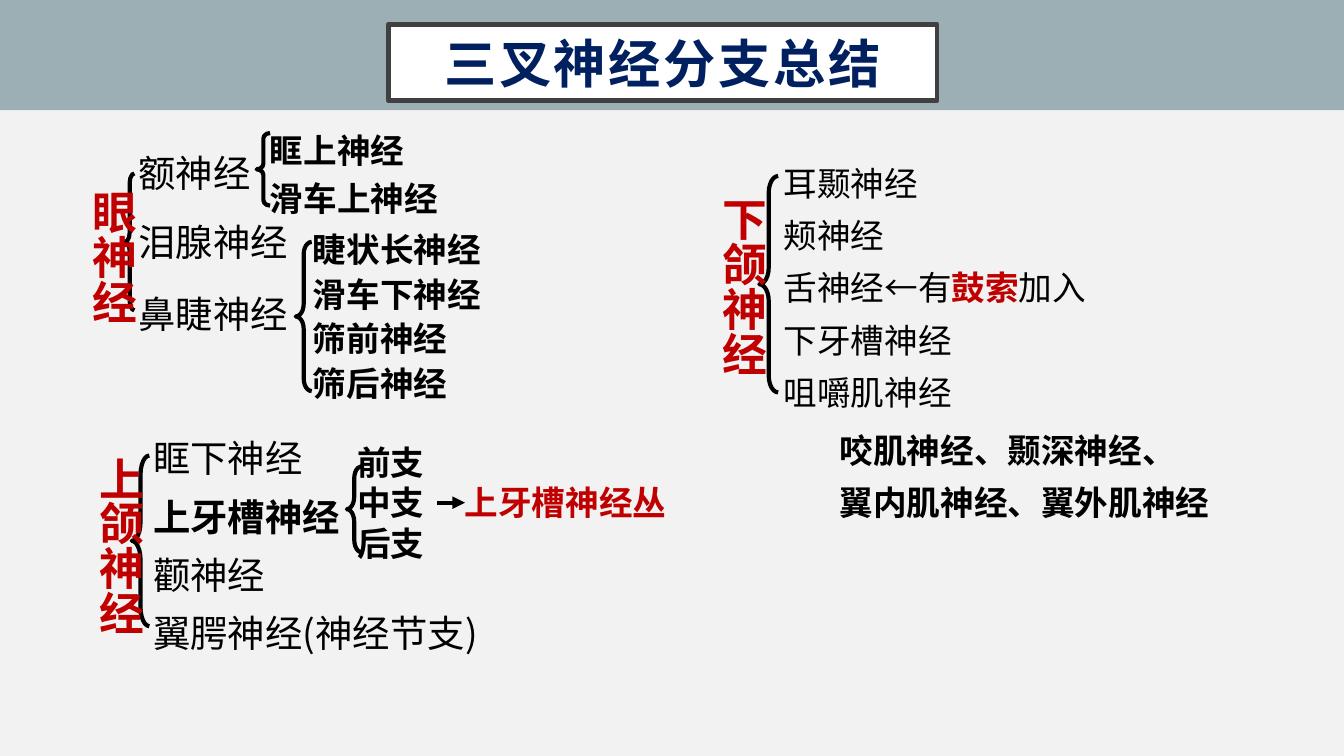
from itertools import cycle

from lxml import etree
from pptx import Presentation
from pptx.dml.color import RGBColor
from pptx.enum.shapes import MSO_CONNECTOR, MSO_SHAPE
from pptx.enum.text import MSO_ANCHOR, MSO_AUTO_SIZE, PP_ALIGN
from pptx.oxml.ns import qn
from pptx.util import Pt

RECTANGLE = MSO_SHAPE.RECTANGLE
BRACE = MSO_SHAPE.LEFT_BRACE
STRAIGHT = MSO_CONNECTOR.STRAIGHT
TOP, MIDDLE = MSO_ANCHOR.TOP, MSO_ANCHOR.MIDDLE
LEFT, CENTER = PP_ALIGN.LEFT, PP_ALIGN.CENTER
NO_AUTOFIT = MSO_AUTO_SIZE.NONE

FONT = "Noto Sans CJK SC"
BLACK, RED, NAVY, WHITE = "000000", "C00000", "002060", "FFFFFF"
GREY, BAND, PAPER = "404040", "9BAFB5", "F2F2F2"

TITLE = "三叉神经分支总结"
TITLE_AREA = (208, 13, 294, 41)

# Spans between asterisks are bold; a highlight colour may be given as well.
MAXILLARY = ["眶下神经", "*上牙槽神经*", "颧神经", "翼腭神经(神经节支)"]
MAXILLARY_AREA = (74.9, 222.5, 219.6, 133.2)
MANDIBULAR = ["耳颞神经", "颊神经", "舌神经←有*鼓索*加入", "下牙槽神经", "咀嚼肌神经"]
MANDIBULAR_AREA = (412.6, 76.3, 221.8, 149)

# Main nerves, written vertically: text, area, line spacing
NERVES = [
    ("眼神经", (35.3, 95, 34.6, 106.6), Pt(20)),
    ("上颌神经", (38.2, 237.6, 43.9, 115.2), 1.0),
    ("下颌神经", (372.2, 98.6, 43.9, 120.2), 1.0),
]

# Ophthalmic branches: text, top, width
OPHTHALMIC = [("额神经", 77, 100), ("泪腺神经", 113.8, 113.8), ("鼻睫神经", 152.6, 105.1)]
OPHTHALMIC_LEFT, OPHTHALMIC_HEIGHT = 67, 31.7

# Small branches, bold: lines, area, line spacings, colour
TWIGS = [
    (["眶上神经", "滑车上神经"], (137.5, 58.3, 126.7, 62.6), (1.35, 1.2), BLACK),
    (["睫状长神经", "滑车下神经", "筛前神经", "筛后神经"],
     (160.6, 116.6, 125.3, 103), (Pt(24),), BLACK),
    (["前支", "中支", "后支"], (184.3, 233.3, 74.2, 72.7), (1.0,), BLACK),
    (["上牙槽神经丛"], (241.9, 254.9, 139.7, 28.8), (1.0,), RED),
    (["咬肌神经、颞深神经、", "翼内肌神经、翼外肌神经"],
     (442.8, 220.3, 226.1, 64.1), (1.3,), BLACK),
]

# Braces: area, curvature
BRACES = [
    ((67, 92.9, 5, 73.4), 1.0),
    ((137.5, 71.3, 7.2, 38.9), 0.41),
    ((158.4, 129.6, 8.6, 79.9), 0.77),
    ((70.6, 244.1, 9.4, 91.4), 1.08),
    ((185.8, 249.8, 7.9, 46.1), 0.85),
    ((406.8, 94.3, 10.1, 115.9), 0.89),
]
ARROW = (234, 269.3, 249.1, 269.3)


def color(hex_text):
    return RGBColor.from_string(hex_text)


def points(values):
    return [Pt(value) for value in values]


def place(shape, area):
    shape.left, shape.top, shape.width, shape.height = points(area)


def format_span(span, size, ink, bold):
    span.font.name, span.font.size, span.font.bold = FONT, Pt(size), bold
    span.font.color.rgb = color(ink)
    east_asian = etree.SubElement(span.font._element, qn("a:ea"))
    east_asian.set("typeface", FONT)


def write(shape, lines, size, ink=BLACK, bold=False, spacings=(1.0,),
          highlight=None, anchor=TOP, align=LEFT):
    frame = shape.text_frame
    frame.word_wrap, frame.auto_size = True, NO_AUTOFIT
    frame.vertical_anchor = anchor
    for number, (line, spacing) in enumerate(zip(lines, cycle(spacings))):
        para = frame.add_paragraph() if number else frame.paragraphs[0]
        para.alignment, para.line_spacing = align, spacing
        para.space_before = Pt(0)
        for index, words in enumerate(line.split("*")):
            if words:
                span = para.add_run()
                span.text = words
                marked = index % 2 == 1
                format_span(span, size, highlight if marked and highlight else ink,
                            bold or marked)


def add_text(page, lines, area, size, **style):
    box = page.shapes.add_textbox(*points(area))
    write(box, lines, size, **style)
    return box


def fill_list(box, lines, area, size, **style):
    place(box, area)
    write(box, lines, size, spacings=(1.3,), **style)
    for para in box.text_frame.paragraphs:
        properties = para._p.get_or_add_pPr()
        properties.set("marL", "0")
        properties.set("indent", "0")
        etree.SubElement(properties, qn("a:buNone"))


def add_brace(page, area, curvature):
    brace = page.shapes.add_shape(BRACE, *points(area))
    brace.shadow.inherit = False
    brace.adjustments[0] = curvature
    brace.fill.background()
    brace.line.color.rgb, brace.line.width = color(BLACK), Pt(2.25)


def add_arrow(page, ends):
    arrow = page.shapes.add_connector(STRAIGHT, *points(ends))
    arrow.line.color.rgb, arrow.line.width = color(BLACK), Pt(2.25)
    etree.SubElement(arrow.line._get_or_add_ln(), qn("a:tailEnd")).set("type", "triangle")
    etree.SubElement(arrow._element.spPr, qn("a:effectLst"))


def add_band(page):
    band = page.shapes.add_shape(RECTANGLE, *points((0, 0, 720, 59)))
    band.shadow.inherit = False
    band.fill.solid()
    band.fill.fore_color.rgb = color(BAND)
    band.line.fill.background()
    page.shapes._spTree.insert(2, band._element)  # behind the placeholders


def fill_title(title):
    place(title, TITLE_AREA)
    title.fill.solid()
    title.fill.fore_color.rgb = color(WHITE)
    title.line.color.rgb, title.line.width = color(GREY), Pt(2.5)
    write(title, [TITLE], 28, NAVY, bold=True, anchor=MIDDLE, align=CENTER)
    frame = title.text_frame
    frame.margin_left = frame.margin_right = Pt(14.4)
    frame.margin_top = frame.margin_bottom = Pt(14.4)
    frame.paragraphs[0].runs[0].font._element.set("spc", "150")


def main():
    deck = Presentation()
    deck.slide_width, deck.slide_height = Pt(720), Pt(405)
    page = deck.slides.add_slide(deck.slide_layouts.get_by_name("Two Content"))
    page.background.fill.solid()
    page.background.fill.fore_color.rgb = color(PAPER)

    title, left_list, right_list = page.placeholders
    add_band(page)
    fill_title(title)
    fill_list(left_list, MAXILLARY, MAXILLARY_AREA, 20)
    fill_list(right_list, MANDIBULAR, MANDIBULAR_AREA, 18, highlight=RED, anchor=MIDDLE)

    for text, top, width in OPHTHALMIC:
        add_text(page, [text], (OPHTHALMIC_LEFT, top, width, OPHTHALMIC_HEIGHT), 20)
    for lines, area, spacings, ink in TWIGS:
        add_text(page, lines, area, 18, ink=ink, bold=True, spacings=spacings)
    for area, curvature in BRACES:
        add_brace(page, area, curvature)
    for text, area, spacing in NERVES:
        box = add_text(page, [text], area, 24, ink=RED, bold=True, spacings=(spacing,))
        box.text_frame._txBody.bodyPr.set("vert", "eaVert")
    add_arrow(page, ARROW)
    deck.save("out.pptx")


if __name__ == "__main__":
    main()
